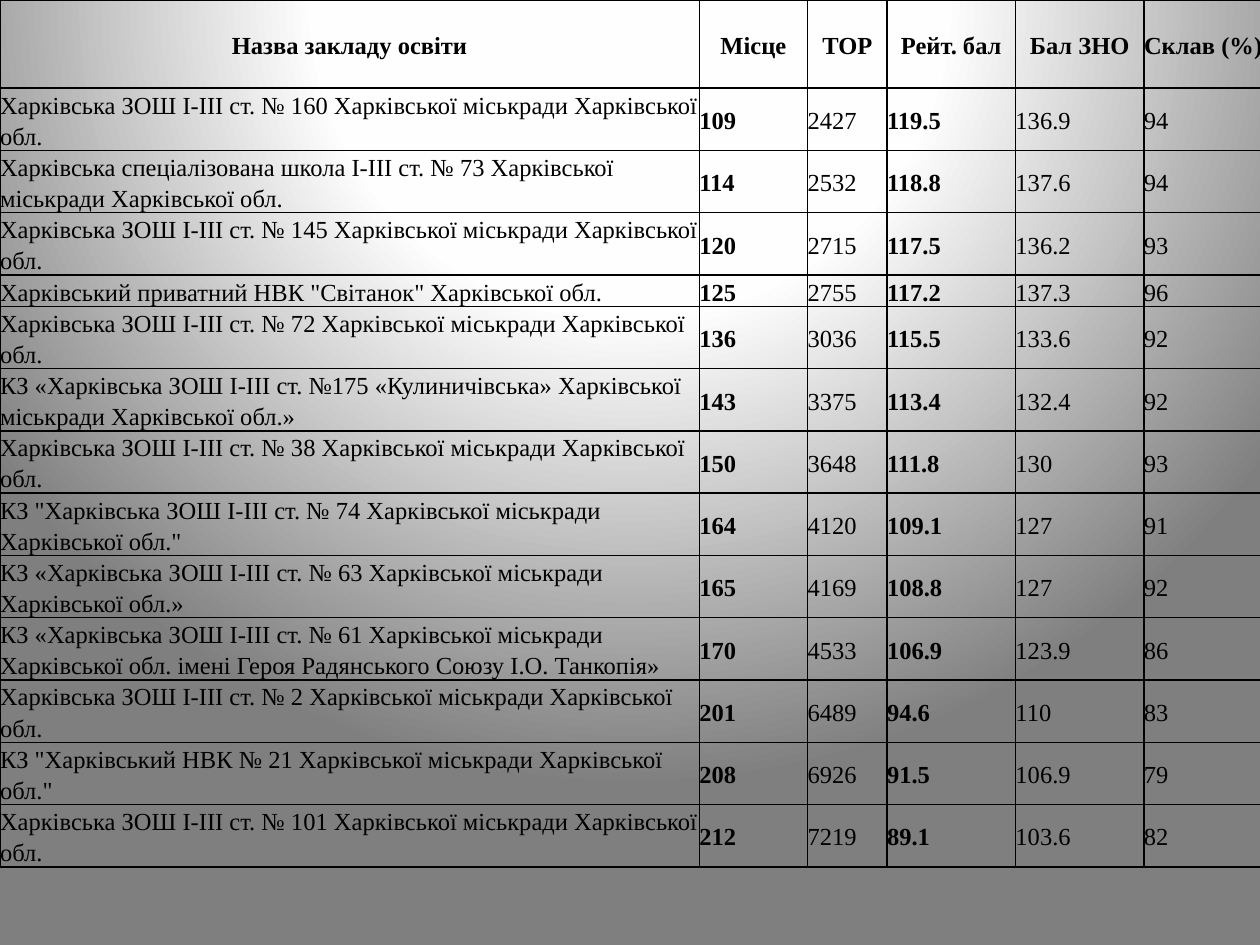
from pptx import Presentation
from pptx import util as u
from pptx.dml.color import RGBColor
from pptx.enum import text
from pptx.oxml import parse_xml
from pptx.oxml.ns import nsdecls

HEADERS = ["Назва закладу освіти", "Місце", "TOP", "Рейт. бал", "Бал ЗНО", "Склав (%)"]
SCHOOLS = [
    ("Харківська ЗОШ I-III ст. № 160 Харківської міськради Харківської обл.", 109, 2427, 119.5, 136.9, 94),
    ("Харківська спеціалізована школа I-III ст. № 73 Харківської міськради Харківської обл.", 114, 2532, 118.8, 137.6, 94),
    ("Харківська ЗОШ I-III ст. № 145 Харківської міськради Харківської обл.", 120, 2715, 117.5, 136.2, 93),
    ('Харківський приватний НВК "Світанок" Харківської обл.', 125, 2755, 117.2, 137.3, 96),
    ("Харківська ЗОШ I-III ст. № 72 Харківської міськради Харківської обл.", 136, 3036, 115.5, 133.6, 92),
    ("КЗ «Харківська ЗОШ І-ІІІ ст. №175 «Кулиничівська» Харківської міськради Харківської обл.»", 143, 3375, 113.4, 132.4, 92),
    ("Харківська ЗОШ I-III ст. № 38 Харківської міськради Харківської обл.", 150, 3648, 111.8, 130, 93),
    ('КЗ "Харківська ЗОШ І-ІІІ ст. № 74 Харківської міськради Харківської обл."', 164, 4120, 109.1, 127, 91),
    ("КЗ «Харківська ЗОШ І-ІІІ ст. № 63 Харківської міськради Харківської обл.»", 165, 4169, 108.8, 127, 92),
    ("КЗ «Харківська ЗОШ І-ІІІ ст. № 61 Харківської міськради Харківської обл. імені Героя Радянського Союзу І.О. Танкопія»", 170, 4533, 106.9, 123.9, 86),
    ("Харківська ЗОШ I-III ст. № 2 Харківської міськради Харківської обл.", 201, 6489, 94.6, 110, 83),
    ('КЗ "Харківський НВК № 21 Харківської міськради Харківської обл."', 208, 6926, 91.5, 106.9, 79),
    ("Харківська ЗОШ I-III ст. № 101 Харківської міськради Харківської обл.", 212, 7219, 89.1, 103.6, 82),
]
BOLD_COLUMNS = {1, 3}
COLUMN_WIDTHS = [5.55, 0.86, 0.63, 1.02, 1.02, 0.94]
HEADER_HEIGHT, ONE_LINE, TWO_LINES = 0.7, 0.25, 0.49
LINE_CAPACITY = 60

THEME = {
    "font": {"name": "Times New Roman", "size": u.Pt(14)},
    "ink": "000000",
    "border": u.Pt(1),
    "background": [(0, "FFFFFF"), (40, "FEFEFE"), (100, "7F7F7F")],
}
CELL_FORMAT = {
    "margin_left": 0, "margin_right": 0, "margin_top": 0, "margin_bottom": 0,
    "vertical_anchor": text.MSO_ANCHOR.MIDDLE,
}


def apply_format(target, values):
    for name, value in values.items():
        setattr(target, name, value)


def paint_background(slide):
    stops = "".join(
        f'<a:gs pos="{position * 1000}"><a:srgbClr val="{color}"/></a:gs>'
        for position, color in THEME["background"]
    )
    slide.element.cSld.insert(0, parse_xml(
        f'<p:bg {nsdecls("p", "a")}><p:bgPr><a:gradFill rotWithShape="1">'
        f'<a:gsLst>{stops}</a:gsLst><a:path path="circle">'
        '<a:fillToRect l="50000" t="-80000" r="50000" b="180000"/></a:path>'
        '</a:gradFill><a:effectLst/></p:bgPr></p:bg>'
    ))


def add_borders(cell):
    properties = cell._tc.get_or_add_tcPr()
    for index, side in enumerate("LRTB"):
        properties.insert(index, parse_xml(
            f'<a:ln{side} {nsdecls("a")} w="{THEME["border"]}"><a:solidFill>'
            f'<a:srgbClr val="{THEME["ink"]}"/></a:solidFill></a:ln{side}>'
        ))


def write_cell(cell, content, bold, alignment):
    apply_format(cell, CELL_FORMAT)
    cell.fill.background()
    add_borders(cell)
    paragraph = cell.text_frame.paragraphs[0]
    apply_format(paragraph, {"alignment": alignment, "line_spacing": 1.15})
    run = paragraph.add_run()
    run.text = str(content)
    apply_format(run.font, THEME["font"] | {"bold": bold})
    run.font.color.rgb = RGBColor.from_string(THEME["ink"])


def add_ranking(slide):
    heights = [HEADER_HEIGHT] + [
        TWO_LINES if len(school[0]) > LINE_CAPACITY else ONE_LINE for school in SCHOOLS
    ]
    table = slide.shapes.add_table(
        len(heights), len(HEADERS), 0, 0, u.Inches(10), u.Inches(sum(heights))
    ).table
    apply_format(table, {"first_row": False, "horz_banding": False})
    for column, width in zip(table.columns, COLUMN_WIDTHS):
        column.width = u.Inches(width)
    for row, height in zip(table.rows, heights):
        row.height = u.Inches(height)
    for row_index, values in enumerate([HEADERS, *SCHOOLS]):
        is_header = row_index == 0
        alignment = text.PP_ALIGN.CENTER if is_header else text.PP_ALIGN.LEFT
        for column_index, value in enumerate(values):
            bold = is_header or column_index in BOLD_COLUMNS
            write_cell(table.cell(row_index, column_index), value, bold, alignment)


def main():
    presentation = Presentation()
    apply_format(presentation, {"slide_width": u.Inches(10), "slide_height": u.Inches(7.5)})
    slide = presentation.slides.add_slide(presentation.slide_layouts[6])
    paint_background(slide)
    add_ranking(slide)
    presentation.save("out.pptx")


if __name__ == "__main__":
    main()
